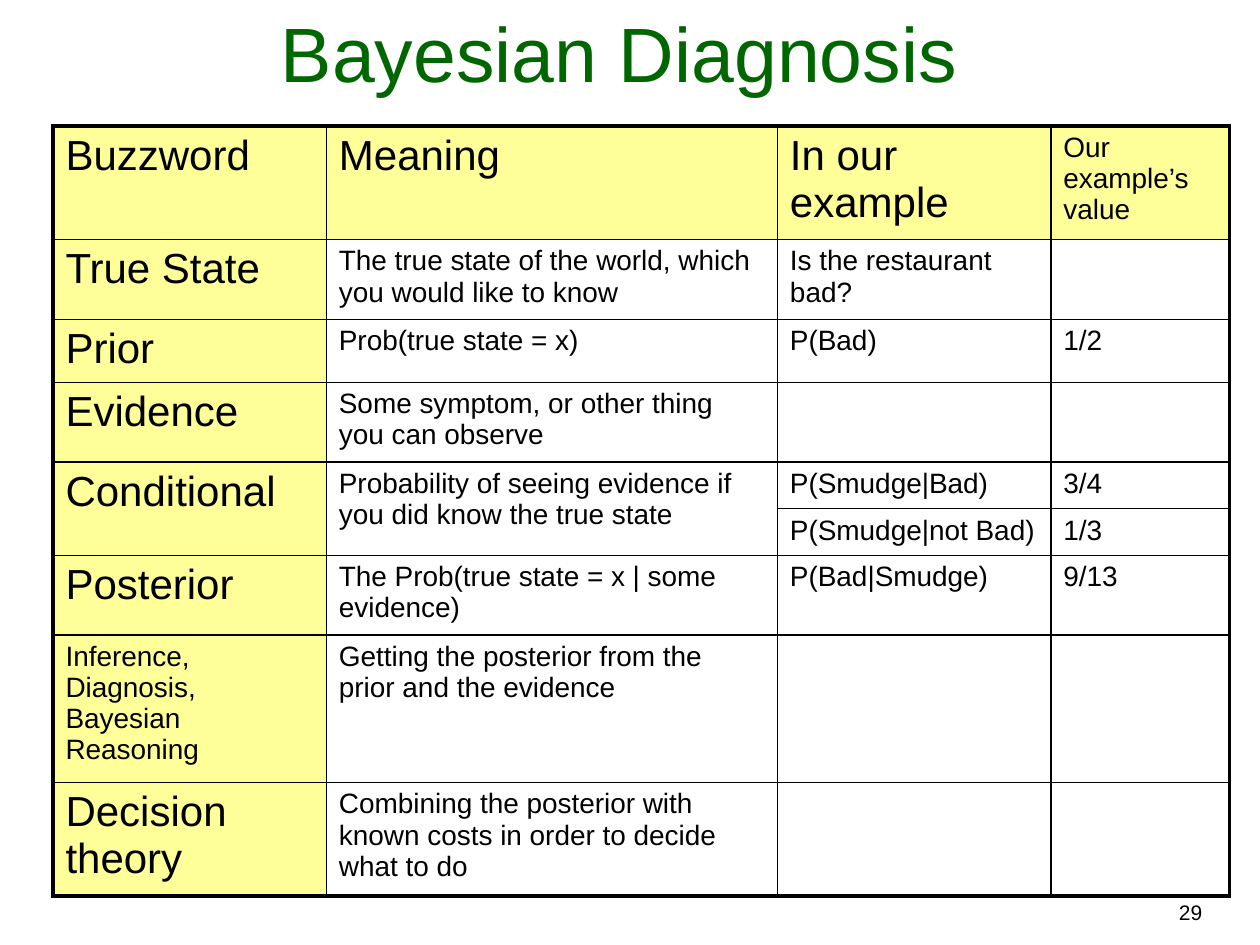
"""Build the Bayesian Diagnosis glossary slide."""
from lxml import etree
from pptx import Presentation
from pptx.dml.color import RGBColor
from pptx.enum.text import MSO_ANCHOR, PP_ALIGN
from pptx.oxml.ns import qn
from pptx.util import Inches, Pt

CENTER, RIGHT = PP_ALIGN.CENTER, PP_ALIGN.RIGHT
TOP, BOTTOM = MSO_ANCHOR.TOP, MSO_ANCHOR.BOTTOM
COLORS = {"title": "006600", "text": "000000", "label": "FFFF99", "border": "000000"}
FONT = "Arial"
LARGE, SMALL = 24, 16
THICK, THIN = 2.25, 1

TITLE = "Bayesian Diagnosis"
PAGE_NUMBER = "29"
ROWS = [
    ("Buzzword", "Meaning", "In our example", "Our example’s value"),
    ("True State", "The true state of the world, which you would like to know",
     "Is the restaurant bad?", ""),
    ("Prior", "Prob(true state = x)", "P(Bad)", "1/2"),
    ("Evidence", "Some symptom, or other thing you can observe", "", ""),
    ("Conditional", "Probability of seeing evidence if you did know the true state",
     "P(Smudge|Bad)", "3/4"),
    ("", "", "P(Smudge|not Bad)", "1/3"),
    ("Posterior", "The Prob(true state = x | some evidence)", "P(Bad|Smudge)", "9/13"),
    ("Inference, Diagnosis, Bayesian Reasoning",
     "Getting the posterior from the prior and the evidence", "", ""),
    ("Decision theory",
     "Combining the posterior with known costs in order to decide what to do", "", ""),
]
COLUMN_WIDTHS = [2.17, 3.58, 2.17, 1.42]
ROW_HEIGHTS = [0.9, 0.63, 0.5, 0.63, 0.37, 0.37, 0.63, 1.17, 0.9]
CONDITIONAL_ROW = 4
SMALL_LABELS = {(0, 3), (7, 0)}


def write(frame, text, size, color="text", align=None):
    """Put formatted text in a text frame."""
    frame.word_wrap = True
    para = frame.paragraphs[0]
    para.alignment = align
    span = para.add_run()
    span.text = text
    span.font.name = FONT
    span.font.size = Pt(size)
    span.font.color.rgb = RGBColor.from_string(COLORS[color])


def add_text(page, text, left, top, width, height, anchor=TOP, **style):
    """Add a text box in inches."""
    box = page.shapes.add_textbox(*map(Inches, (left, top, width, height)))
    box.text_frame.vertical_anchor = anchor
    write(box.text_frame, text, **style)


def set_borders(cell, widths):
    """Draw the left, right, top and bottom borders in points."""
    properties = cell._tc.get_or_add_tcPr()
    for index, (side, width) in enumerate(zip("LRTB", widths)):
        line = etree.Element(qn(f"a:ln{side}"), w=str(Pt(width)))
        fill = etree.SubElement(line, qn("a:solidFill"))
        etree.SubElement(fill, qn("a:srgbClr"), val=COLORS["border"])
        properties.insert(index, line)


def add_glossary(page):
    """Add the table with its label cells and outer frame."""
    last_row, last_column = len(ROWS) - 1, len(COLUMN_WIDTHS) - 1
    table = page.shapes.add_table(
        len(ROWS), len(COLUMN_WIDTHS), Inches(0.42), Inches(1),
        Inches(sum(COLUMN_WIDTHS)), Inches(sum(ROW_HEIGHTS))).table
    table.first_row = table.horz_banding = False
    for column, width in zip(table.columns, COLUMN_WIDTHS):
        column.width = Inches(width)
    for row, height in zip(table.rows, ROW_HEIGHTS):
        row.height = Inches(height)
    for r, texts in enumerate(ROWS):
        for c, text in enumerate(texts):
            cell = table.cell(r, c)
            is_label = r == 0 or c == 0
            if is_label:
                cell.fill.solid()
                cell.fill.fore_color.rgb = RGBColor.from_string(COLORS["label"])
            else:
                cell.fill.background()
            if text:
                is_large = is_label and (r, c) not in SMALL_LABELS
                write(cell.text_frame, text, LARGE if is_large else SMALL)
            edges = (c == 0, c == last_column, r == 0, r == last_row)
            set_borders(cell, [THICK if edge else THIN for edge in edges])
    for c in (0, 1):
        table.cell(CONDITIONAL_ROW, c).merge(table.cell(CONDITIONAL_ROW + 1, c))


def main():
    deck = Presentation()
    deck.slide_width, deck.slide_height = Inches(10), Inches(7.5)
    page = deck.slides.add_slide(deck.slide_layouts[6])
    add_text(page, PAGE_NUMBER, 5.72, 7.09, 3.92, 0.3, size=12, align=RIGHT)
    add_text(page, TITLE, 0.25, 0.08, 9.33, 0.75, anchor=BOTTOM,
             size=44, color="title", align=CENTER)
    add_glossary(page)
    deck.save("out.pptx")


if __name__ == "__main__":
    main()
